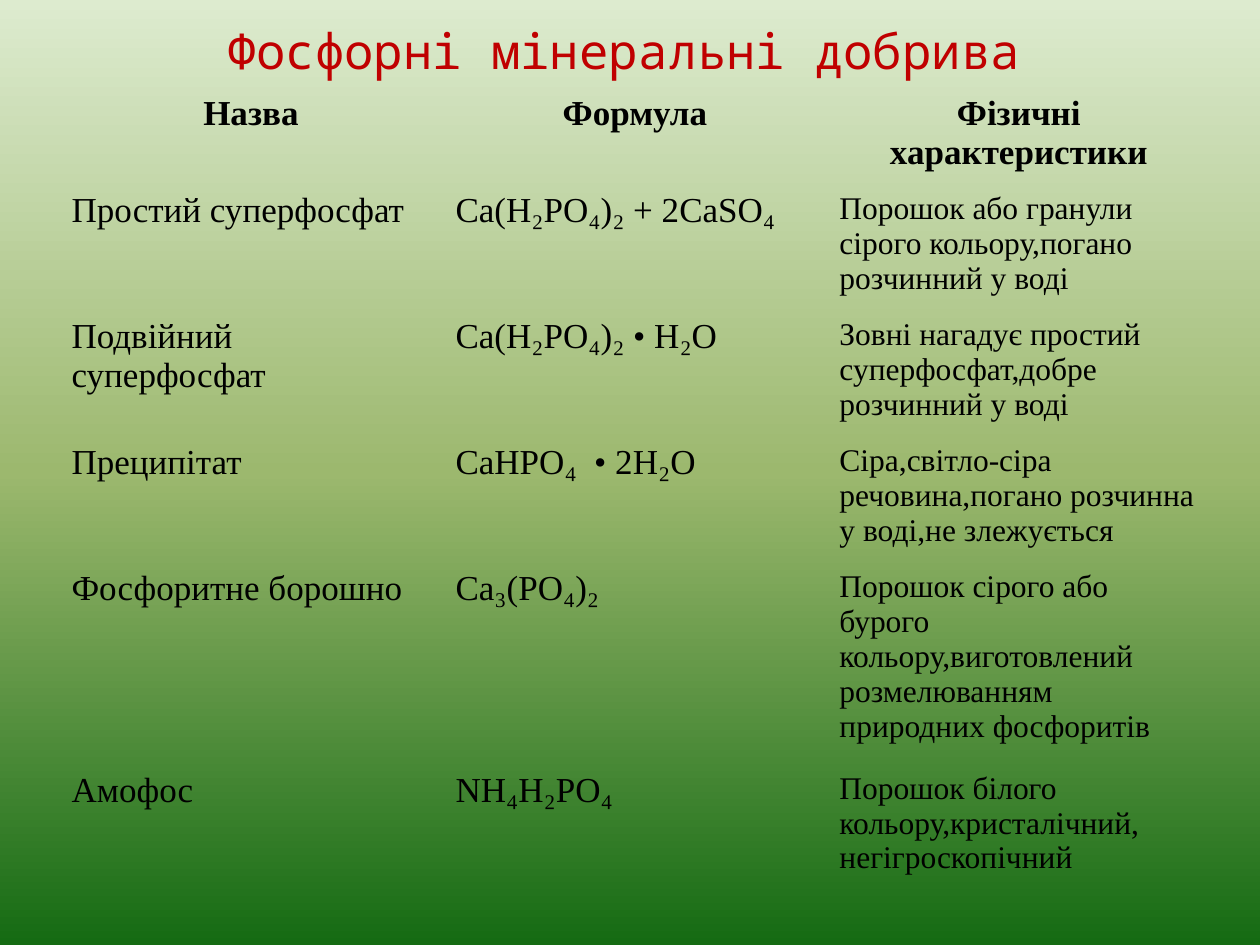
from copy import deepcopy
from dataclasses import dataclass

from pptx import Presentation
from pptx.dml.color import RGBColor as RGB
from pptx.enum.text import MSO_ANCHOR as Anchor, PP_ALIGN as Align
from pptx.oxml.ns import qn
from pptx.util import Emu, Pt

PX_PER_INCH = 126
NO_STYLE_NO_GRID = "{2D5ABB26-0587-4C30-8999-92F81FD0307C}"


@dataclass(frozen=True)
class Theme:
    title_font: str = "Noto Sans Mono"
    body_font: str = "Times New Roman"
    title_size: int = 28
    body_size: int = 20
    detail_size: int = 18
    title_color: str = "C00000"
    body_color: str = "000000"
    background: tuple = ((0, "DDEBCF"), (0.5, "9CB86E"), (1, "156B13"))


THEME = Theme()

TITLE = "Фосфорні мінеральні добрива"
HEADER = ("Назва", "Формула", "Фізичні характеристики")
FERTILIZERS = (
    ("Простий суперфосфат", "Ca(H₂PO₄)₂ + 2CaSO₄",
     "Порошок або гранули сірого кольору,погано розчинний у воді"),
    ("Подвійний суперфосфат", "Ca(H₂PO₄)₂ • H₂O",
     "Зовні нагадує простий суперфосфат,добре розчинний у воді"),
    ("Преципітат", "CaHPO₄  • 2H₂O",
     "Сіра,світло-сіра речовина,погано розчинна у воді,не злежується"),
    ("Фосфоритне борошно", "Ca₃(PO₄)₂",
     "Порошок сірого або бурого кольору,виготовлений розмелюванням "
     "природних фосфоритів"),
    ("Амофос", "NH₄H₂PO₄",
     "Порошок білого кольору,кристалічний,\nнегігроскопічний"),
)
COLUMN_WIDTH = 384
ROW_HEIGHTS = (97, 126, 97, 52, 52, 52)


def px(n):
    return Emu(round(n * 914400 / PX_PER_INCH))


def set_text(tf, text, font, size, color, bold=False, align=Align.LEFT):
    tf.text = text
    for p in tf.paragraphs:
        p.alignment = align
        for r in p.runs:
            r.font.name = font
            r.font.size = Pt(size)
            r.font.bold = bold
            r.font.color.rgb = RGB.from_string(color)


def paint_background(s, stops):
    fill = s.background.fill
    fill.gradient()
    fill.gradient_angle = 270  # counter-clockwise, so top to bottom
    # A new gradient has two stops; add those that are missing
    gs_list = s.element.find(".//" + qn("a:gsLst"))
    while len(gs_list) < len(stops):
        gs_list.append(deepcopy(gs_list[-1]))
    for stop, (position, color) in zip(fill.gradient_stops, stops):
        stop.position = position
        stop.color.rgb = RGB.from_string(color)


def add_title(s, text, left, top, width, height):
    tf = s.shapes.add_textbox(px(left), px(top), px(width), px(height)).text_frame
    tf.word_wrap = True
    tf.vertical_anchor = Anchor.MIDDLE
    set_text(tf, text, THEME.title_font, THEME.title_size, THEME.title_color,
             align=Align.CENTER)


def add_fertilizer_table(s, left, top):
    rows = (HEADER, *FERTILIZERS)
    frame = s.shapes.add_table(len(rows), len(HEADER), px(left), px(top),
                               px(COLUMN_WIDTH * len(HEADER)), px(sum(ROW_HEIGHTS)))
    table = frame.table
    table.first_row = table.horz_banding = False
    frame.element.find(".//" + qn("a:tableStyleId")).text = NO_STYLE_NO_GRID

    for column in table.columns:
        column.width = px(COLUMN_WIDTH)
    for i, (row, height) in enumerate(zip(rows, ROW_HEIGHTS)):
        table.rows[i].height = px(height)
        is_header = i == 0
        for j, text in enumerate(row):
            cell = table.cell(i, j)
            cell.fill.background()
            is_detail = not is_header and j == len(HEADER) - 1
            set_text(cell.text_frame, text, THEME.body_font,
                     THEME.detail_size if is_detail else THEME.body_size,
                     THEME.body_color, bold=is_header,
                     align=Align.CENTER if is_header else Align.LEFT)


def main():
    prs = Presentation()
    prs.slide_width, prs.slide_height = px(1260), px(945)
    s = prs.slides.add_slide(prs.slide_layouts[6])

    # Backdrop
    paint_background(s, THEME.background)
    # Heading
    add_title(s, TITLE, 69, 20, 1109, 60)
    # Fertilizers with formulas and properties
    add_fertilizer_table(s, 59, 88)

    prs.save("out.pptx")


if __name__ == "__main__":
    main()
